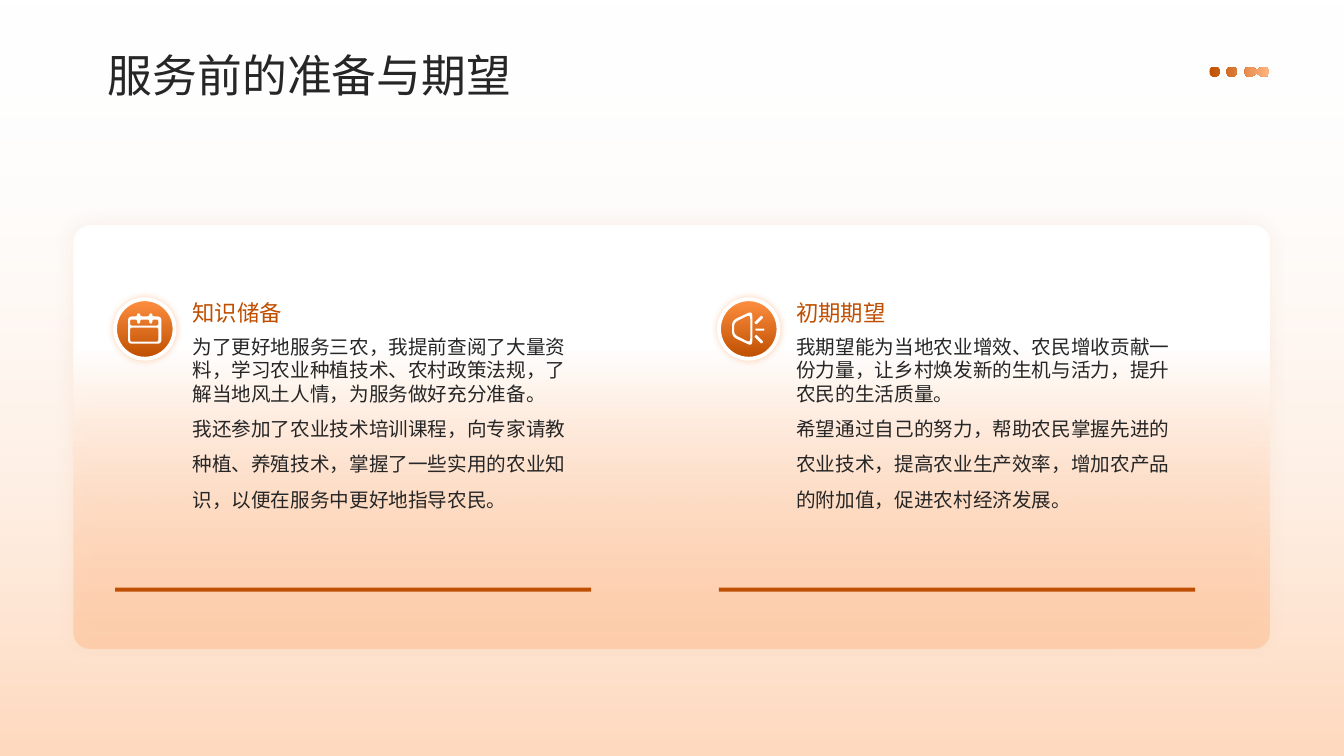
from lxml import etree
from pptx import Presentation
from pptx.dml.color import RGBColor
from pptx.enum.shapes import MSO_SHAPE
from pptx.enum.text import MSO_ANCHOR, MSO_AUTO_SIZE, PP_ALIGN
from pptx.oxml.ns import qn
from pptx.util import Cm, Pt

RECTANGLE = MSO_SHAPE.RECTANGLE
ROUNDED = MSO_SHAPE.ROUNDED_RECTANGLE
CIRCLE = MSO_SHAPE.FLOWCHART_CONNECTOR
MIDDLE = MSO_ANCHOR.MIDDLE
NO_AUTOFIT = MSO_AUTO_SIZE.NONE
LEFT = PP_ALIGN.LEFT

WHITE = RGBColor(0xFF, 0xFF, 0xFF)
INK = RGBColor(0x26, 0x26, 0x26)
RUST = RGBColor(0xBF, 0x4F, 0x00)
ORANGE = RGBColor(0xFF, 0x8F, 0x40)
APRICOT = RGBColor(0xFF, 0xB4, 0x7F)
PEACH = RGBColor(0xFF, 0xDA, 0xBF)
FONT = "Noto Sans CJK SC"
UNIT = Cm(0.0254)
FINENESS = 100

CALENDAR = [
    (4, [(0, 3), (9, 3), (9, 0), (12, 0), (12, 3), (21, 3), (21, 0), (24, 0),
         (24, 3), (33, 3), (33, 30), (0, 30)]),
    (2, [(2, 6), (9, 6), (9, 10), (12, 10), (12, 6), (21, 6), (21, 10), (24, 10),
         (24, 6), (30, 6), (30, 12), (2, 12)]),
    (2, [(2, 14), (30, 14), (30, 28), (2, 28)]),
]
SPEAKER = [
    (5, [(0, 7), (20, -2.5), (20, 32.5), (0, 23)]),
    (4, [(2, 9), (18, 1), (18, 29), (2, 21)]),
    (1, [(23, 15), (32, 15), (32, 17), (23, 17)]),
    (1, [(22, 9), (29, 2), (31, 4), (24, 11)]),
    (1, [(22, 23), (24, 21), (31, 28), (29, 30)]),
]
DOTS = [
    (5, [(x, 0), (x + 10, 0), (x + 10, 10), (x, 10)]) for x in (0, 17)
] + [
    (5, [(35, 0), (43, 0), (47, 4), (51, 0), (59, 0), (59, 10), (51, 10),
         (47, 6), (43, 10), (35, 10)]),
]

COLUMNS = [
    ("知识储备", CALENDAR, [
        "为了更好地服务三农，我提前查阅了大量资料，学习农业种植技术、农村政策法规，了解当地风土人情，为服务做好充分准备。",
        "我还参加了农业技术培训课程，向专家请教种植、养殖技术，掌握了一些实用的农业知识，以便在服务中更好地指导农民。",
    ]),
    ("初期期望", SPEAKER, [
        "我期望能为当地农业增效、农民增收贡献一份力量，让乡村焕发新的生机与活力，提升农民的生活质量。",
        "希望通过自己的努力，帮助农民掌握先进的农业技术，提高农业生产效率，增加农产品的附加值，促进农村经济发展。",
    ]),
]


def set_alpha(color_parent, percent):
    """Set the opacity of the colour inside an element."""
    color = color_parent.find(qn("a:srgbClr"))
    etree.SubElement(color, qn("a:alpha"), val=str(percent * 1000))


def set_gradient(shape, angle, *stops):
    """Fill a shape with two (position, colour, opacity) stops."""
    shape.fill.gradient()
    shape.fill.gradient_angle = angle
    elements = shape.element.spPr.iter(qn("a:gs"))
    for stop, element, (position, color, opacity) in zip(
            shape.fill.gradient_stops, list(elements), stops):
        stop.position = position
        stop.color.rgb = color
        if opacity < 100:
            set_alpha(element, opacity)


def set_glow_shadow(shape, color, opacity, blur):
    """Give a shape a centred soft shadow."""
    effects = shape.element.spPr.find(qn("a:effectLst"))
    shadow = etree.SubElement(effects, qn("a:outerShdw"), blurRad=str(Pt(blur)),
                              dist="0", dir="0", algn="ctr", rotWithShape="0")
    etree.SubElement(shadow, qn("a:srgbClr"), val=str(color))
    set_alpha(shadow, opacity)


def add_plain_shape(slide, kind, left, top, width, height):
    """Add a preset shape without line or shadow."""
    shape = slide.shapes.add_shape(kind, left, top, width, height)
    shape.shadow.inherit = False
    shape.line.fill.background()
    return shape


def round_corners(points, radius):
    """Return the outline of a polygon with rounded corners."""
    outline = []
    for index, (x, y) in enumerate(points):
        ends = []
        for near_x, near_y in (points[index - 1], points[(index + 1) % len(points)]):
            length = ((near_x - x) ** 2 + (near_y - y) ** 2) ** 0.5
            share = min(radius / length, 0.5)
            ends.append((x + (near_x - x) * share, y + (near_y - y) * share))
        for step in range(7):
            t = step / 6
            outline.append(tuple(
                FINENESS * ((1 - t) ** 2 * a + 2 * t * (1 - t) * b + t ** 2 * c)
                for a, b, c in zip(ends[0], (x, y), ends[1])))
    return outline


def add_outline(slide, contours, left, top):
    """Draw rounded contours as one freeform."""
    builder = None
    for radius, points in contours:
        first, *rest = round_corners(points, radius)
        if builder is None:
            builder = slide.shapes.build_freeform(*first, scale=UNIT / FINENESS)
        else:
            builder.move_to(*first)
        builder.add_line_segments(rest, close=True)
    shape = builder.convert_to_shape(left, top)
    shape.shadow.inherit = False
    shape.line.fill.background()
    return shape


def format_paragraph(paragraph, size, color, spacing):
    """Set the font and line spacing of a paragraph."""
    paragraph.alignment = LEFT
    paragraph.line_spacing = spacing
    paragraph.font.size = Pt(size)
    paragraph.font.color.rgb = color
    paragraph.font.name = FONT
    properties = paragraph.font._element
    etree.SubElement(properties, qn("a:ea"), typeface=FONT)


def add_text(slide, left, top, width, height, texts, size, color, spacings):
    """Add a wrapped text box with one paragraph for each text."""
    frame = slide.shapes.add_textbox(left, top, width, height).text_frame
    frame.word_wrap = True
    frame.text = "\n".join(texts)
    for paragraph, spacing in zip(frame.paragraphs, spacings):
        format_paragraph(paragraph, size, color, spacing)


def add_backdrop(slide, width, height):
    """Add the tinted page and the rounded panel."""
    page = add_plain_shape(slide, RECTANGLE, 0, 0, width, height)
    set_gradient(page, 270, (0, WHITE, 0), (1, PEACH, 100))
    panel = add_plain_shape(slide, ROUNDED, Cm(1.85), Cm(5.69), Cm(30.15), Cm(10.64))
    panel.adjustments[0] = 0.04
    set_gradient(panel, 270, (0.29, WHITE, 100), (1, APRICOT, 40))
    set_glow_shadow(panel, RUST, 8, 15)


def add_column(slide, left, top, heading, icon, texts):
    """Add a badge, heading, body text and rule."""
    text_left = left + Cm(1.7)
    add_text(slide, text_left, top + Cm(0.97), Cm(10), Cm(6.27),
             texts, 14, INK, (1.0, 1.5))
    add_text(slide, text_left, top, Cm(10), Cm(1.02), [heading], 16, RUST, (1.1,))
    rule = add_plain_shape(slide, RECTANGLE, left, top + Cm(7.47), Cm(12), Cm(0.1))
    rule.fill.solid()
    rule.fill.fore_color.rgb = RUST
    badge = add_plain_shape(slide, CIRCLE, left, top + Cm(0.2), Cm(1.5), Cm(1.5))
    set_gradient(badge, 90, (0, RUST, 100), (1, ORANGE, 100))
    badge.line.color.rgb = WHITE
    badge.line.width = Pt(2.75)
    set_glow_shadow(badge, ORANGE, 40, 5)
    symbol = add_outline(slide, icon, left + Cm(0.33), top + Cm(0.56))
    symbol.fill.solid()
    symbol.fill.fore_color.rgb = WHITE


def add_header(slide, left, top, width, height):
    """Place the title in front and the dots at its right."""
    title = slide.shapes.title
    title.element.getparent().append(title.element)
    title.left, title.top, title.width, title.height = left, top, width, height
    frame = title.text_frame
    frame.text = "服务前的准备与期望"
    frame.auto_size = NO_AUTOFIT
    frame.word_wrap = True
    frame.vertical_anchor = MIDDLE
    frame.margin_left = frame.margin_right = frame.margin_top = frame.margin_bottom = 0
    format_paragraph(frame.paragraphs[0], 32, INK, 1.1)
    dots = add_outline(slide, DOTS, left + width + Cm(0.43), top + Cm(0.51))
    set_gradient(dots, 0, (0, RUST, 100), (1, APRICOT, 100))


def main():
    """Build and save the slide."""
    presentation = Presentation()
    presentation.slide_width = Cm(33.87)
    presentation.slide_height = Cm(19.05)
    slide = presentation.slides.add_slide(presentation.slide_layouts[5])
    add_backdrop(slide, presentation.slide_width, presentation.slide_height)
    for index, column in enumerate(COLUMNS):
        add_column(slide, Cm(2.9 + 15.22 * index), Cm(7.34), *column)
    add_header(slide, Cm(2.72), Cm(1.17), Cm(27.33), Cm(1.3))
    presentation.save("out.pptx")


if __name__ == "__main__":
    main()
